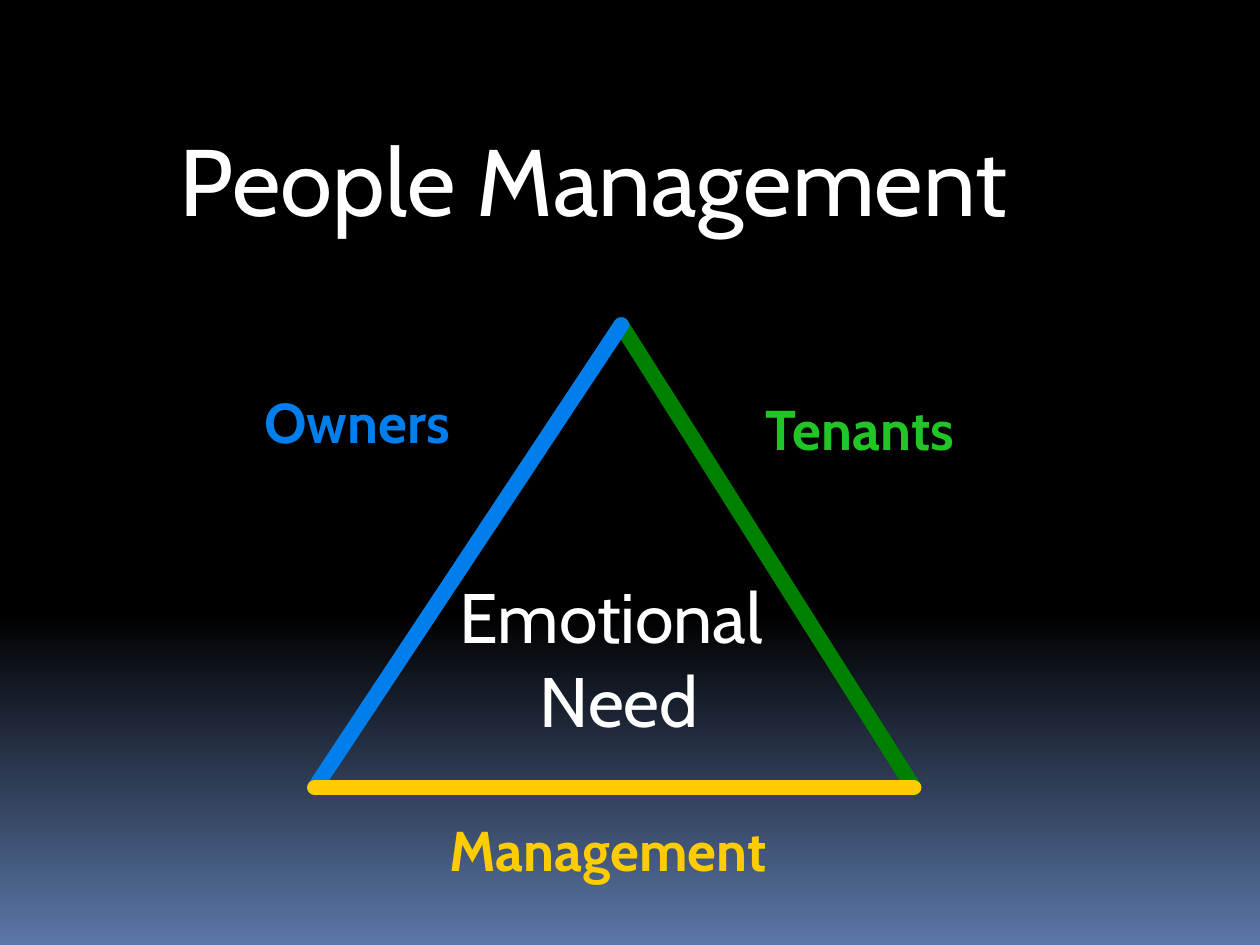
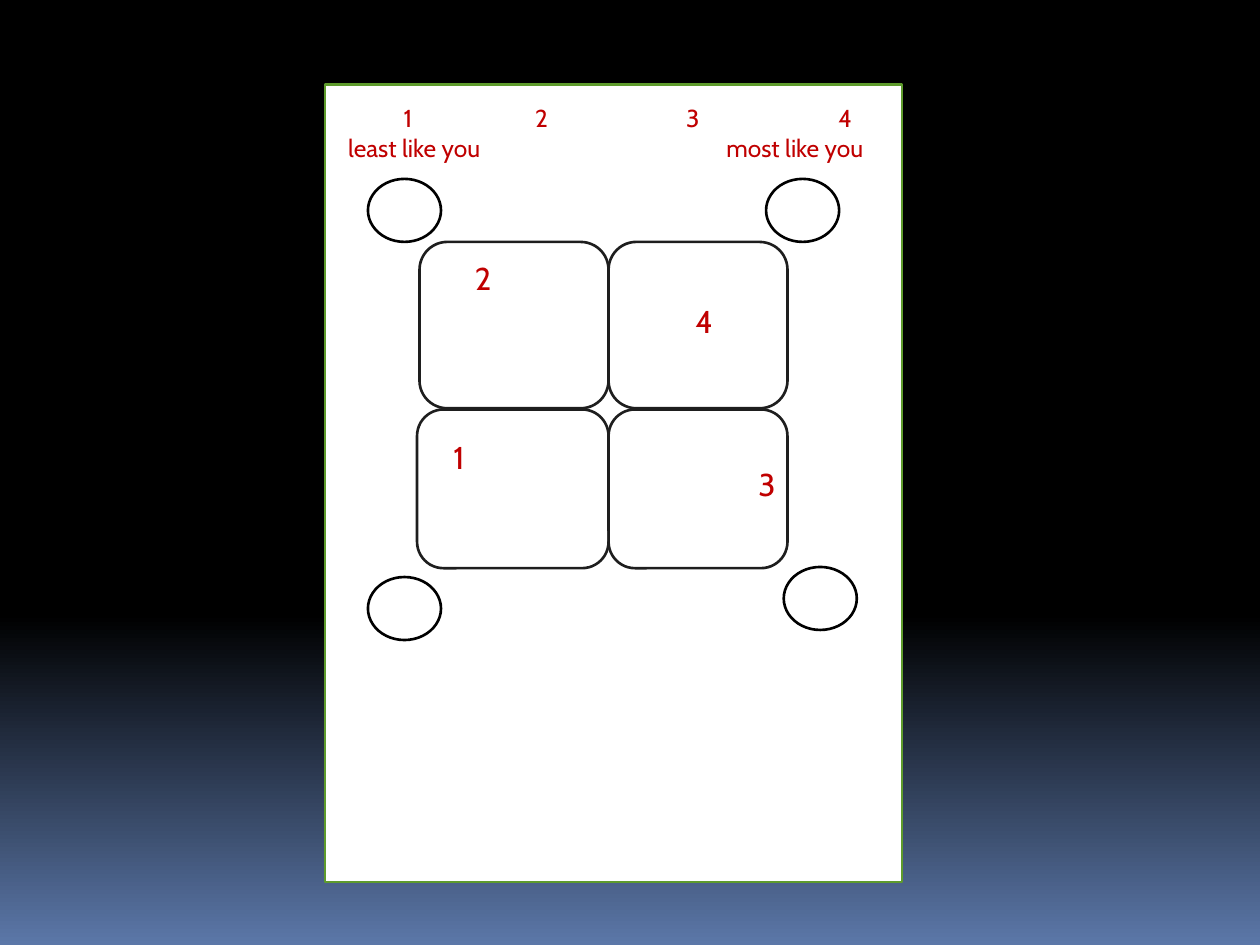
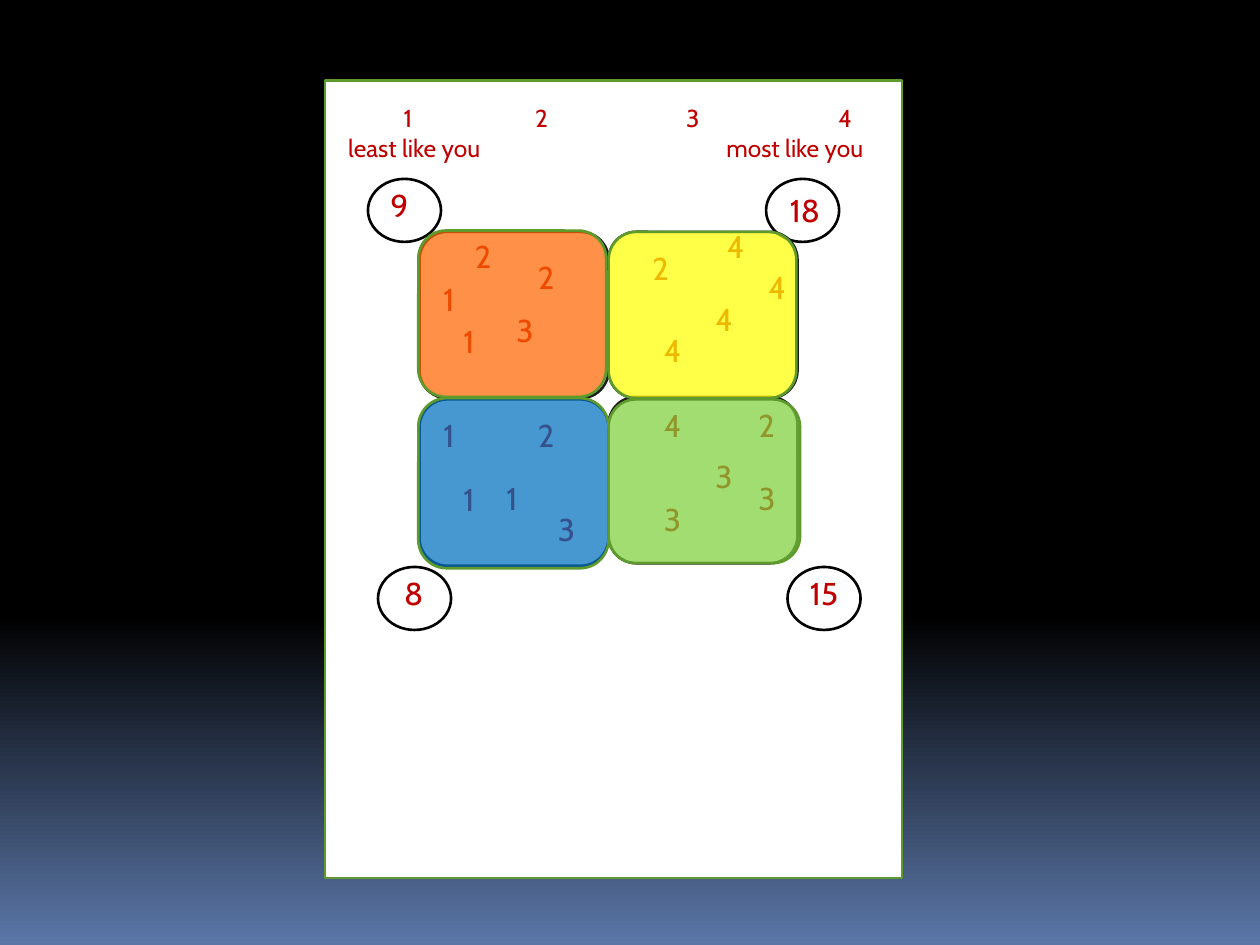
from copy import deepcopy
from dataclasses import dataclass

from lxml import etree
from pptx import Presentation
from pptx import util as u
from pptx.dml.color import RGBColor
from pptx.enum import shapes, text
from pptx.oxml import ns

EMU_PER_PX = 9144  # 100 px to the inch
TITLE_ONLY, BLANK = 5, 6


@dataclass(frozen=True)
class Theme:
    font: str = "Cabin"
    black: str = "000000"
    white: str = "FFFFFF"
    dusk: str = "5B77A8"
    red: str = "C00000"
    leaf: str = "5E9B2C"
    charcoal: str = "1E1E1E"
    owners: str = "007EEB"
    tenants: str = "21C525"
    tenants_side: str = "008000"
    management: str = "FFCC00"
    panels: tuple = ("FF6600", "FFFF00", "0070C0", "7FD13B")
    panel_alpha: int = 72
    title_size: int = 54
    need_size: int = 40
    label_size: int = 32
    digit_size: int = 18
    scale_size: int = 14
    outline: float = 1.5
    side_width: int = 9


THEME = Theme()


# Shared helpers
def px(value):
    return u.Emu(value * EMU_PER_PX)


def rgb(color):
    return RGBColor.from_string(color)


def set_attributes(target, values):
    for name, value in values.items():
        setattr(target, name, value)


def place(shape, box):
    names = ("left", "top", "width", "height")
    set_attributes(shape, dict(zip(names, map(px, box))))


def within(box, part):
    """Shift a part (x, y, ...) by the corner of its box."""
    return (box[0] + part[0], box[1] + part[1], *part[2:])


def write(shape, lines, size, color, bold=False, align=text.PP_ALIGN.LEFT):
    frame = shape.text_frame
    set_attributes(frame, {"word_wrap": True,
                           "auto_size": text.MSO_AUTO_SIZE.SHAPE_TO_FIT_TEXT,
                           "vertical_anchor": text.MSO_ANCHOR.TOP})
    frame.text = "\n".join(lines)
    for paragraph in frame.paragraphs:
        paragraph.alignment = align
        font = paragraph.runs[0].font
        set_attributes(font, {"name": THEME.font, "size": u.Pt(size), "bold": bold})
        font.color.rgb = rgb(color)


def add_text(slide, box, lines, size, color, **style):
    shape = slide.shapes.add_textbox(*map(px, box))
    write(shape, lines, size, color, **style)
    return shape


def add_outlined(slide, kind, box, line, fill=None, alpha=None):
    shape = slide.shapes.add_shape(kind, *map(px, box))
    shape.shadow.inherit = False
    shape.line.color.rgb = rgb(line)
    shape.line.width = u.Pt(THEME.outline)
    if fill is None:
        shape.fill.background()
        return
    shape.fill.solid()
    shape.fill.fore_color.rgb = rgb(fill)
    if alpha is not None:
        color = shape.element.spPr.find(ns.qn("a:solidFill"))[0]
        etree.SubElement(color, ns.qn("a:alpha"), val=str(alpha * 1000))


def add_side(slide, start, end, color):
    side = slide.shapes.add_connector(
        shapes.MSO_CONNECTOR.STRAIGHT, *map(px, start + end))
    side.line.color.rgb = rgb(color)
    side.line.width = u.Pt(THEME.side_width)
    properties = side.element.spPr
    properties.find(ns.qn("a:ln")).set("cap", "rnd")
    etree.SubElement(properties, ns.qn("a:effectLst"))


def set_tabs(paragraph, centres):
    tabs = etree.SubElement(paragraph._p.get_or_add_pPr(), ns.qn("a:tabLst"))
    for centre in centres:
        etree.SubElement(tabs, ns.qn("a:tab"), pos=str(px(centre)), algn="ctr")


def paint_background(master):
    fill = master.background.fill
    fill.gradient()
    fill.gradient_angle = 270
    stops = master.element.find(".//" + ns.qn("a:gsLst"))
    stops.insert(0, deepcopy(stops[0]))
    colors = (THEME.black, THEME.black, THEME.dusk)
    for stop, position, color in zip(fill.gradient_stops, (0, 0.65, 1), colors):
        stop.position = position
        stop.color.rgb = rgb(color)


# Slide 1: triangle of people
def add_triangle(slide, box):
    left, top, width, height = box
    apex = (left + 243, top)
    base_left, base_right = (left, top + height), (left + width, top + height)
    add_side(slide, apex, base_right, THEME.tenants_side)
    add_side(slide, apex, base_left, THEME.owners)
    add_side(slide, base_left, base_right, THEME.management)

    labels = (("Owners", (-50, 45, 175, 64), THEME.owners),
              ("Tenants", (348, 50, 217, 64), THEME.tenants),
              ("Management", (97, 384, 278, 64), THEME.management))
    for label, part, color in labels:
        add_text(slide, within(box, part), [label], THEME.label_size, color, bold=True)
    add_text(slide, within(box, (-25, 192, 533, 145)), ["Emotional ", "Need"],
             THEME.need_size, THEME.white, align=text.PP_ALIGN.CENTER)


def build_people_slide(presentation):
    slide = presentation.slides.add_slide(presentation.slide_layouts[TITLE_ONLY])
    title = slide.shapes.title
    place(title, (117, 92, 708, 101))
    write(title, ["People Management"], THEME.title_size, THEME.white,
          align=text.PP_ALIGN.CENTER)
    add_triangle(slide, (250, 258, 475, 367))


# Slides 2 and 3: scoring sheet
def add_scale(slide, box):
    shape = add_text(slide, box, ["\t1\t2\t3\t4", "\tleast like you\tmost like you"],
                     THEME.scale_size, THEME.red)
    numbers, meanings = shape.text_frame.paragraphs
    set_tabs(numbers, (56, 162, 282, 403))
    set_tabs(meanings, (61, 363))


def add_numbers(slide, box, numbers, width):
    for number, corners in numbers.items():
        for corner in corners:
            add_text(slide, within(box, (*corner, width, 40)), [number],
                     THEME.digit_size, THEME.red)


def build_sheet_slide(presentation, box, card_top, circles, digits, frames,
                      scores=None, panels=()):
    slide = presentation.slides.add_slide(presentation.slide_layouts[BLANK])
    kinds = shapes.MSO_SHAPE
    add_outlined(slide, kinds.RECTANGLE, within(box, (0, card_top, *box[2:])),
                 THEME.leaf, THEME.white)
    for corner in circles:
        add_outlined(slide, kinds.OVAL, within(box, (*corner, 58, 50)),
                     THEME.black, THEME.white)
    add_numbers(slide, box, digits, 42)
    add_numbers(slide, box, scores or {}, 58)
    add_scale(slide, within(box, (0, 10, box[2], 57)))
    for frame in frames:
        add_outlined(slide, kinds.ROUNDED_RECTANGLE, within(box, frame), THEME.charcoal)
    for panel, color in zip(panels, THEME.panels):
        add_outlined(slide, kinds.ROUNDED_RECTANGLE, within(box, panel), THEME.leaf,
                     color, THEME.panel_alpha)


def main():
    presentation = Presentation()
    set_attributes(presentation, {"slide_width": px(1000), "slide_height": px(750)})
    paint_background(presentation.slide_master)
    build_people_slide(presentation)

    sheet = (258, 67, 458, 633)
    build_sheet_slide(
        presentation, sheet, card_top=0,
        circles=((34, 75), (364, 383), (34, 391), (350, 75)),
        digits={"2": [(109, 134)], "3": [(334, 297)],
                "1": [(92, 276)], "4": [(284, 168)]},
        frames=((75, 125, 150, 132), (225, 125, 142, 132),
                (225, 258, 142, 126), (73, 258, 152, 126)))
    build_sheet_slide(
        presentation, sheet, card_top=-3,
        circles=((34, 75), (367, 383), (42, 383), (350, 75)),
        digits={
            "1": [(84, 258), (100, 309), (84, 150), (134, 308), (100, 184)],
            "2": [(109, 116), (159, 133), (250, 126), (159, 258), (334, 250)],
            "3": [(300, 291), (334, 308), (142, 175), (259, 325), (175, 333)],
            "4": [(259, 250), (300, 166), (259, 191), (342, 141), (309, 108)]},
        scores={"9": [(42, 76)], "18": [(359, 80)],
                "15": [(375, 384)], "8": [(53, 384)]},
        frames=[(*corner, 150, 132)
                for corner in ((75, 117), (75, 250), (225, 248), (225, 117))],
        panels=((74, 116, 149, 132), (225, 117, 149, 132),
                (74, 249, 151, 135), (225, 250, 152, 130)))
    presentation.save("out.pptx")


if __name__ == "__main__":
    main()
